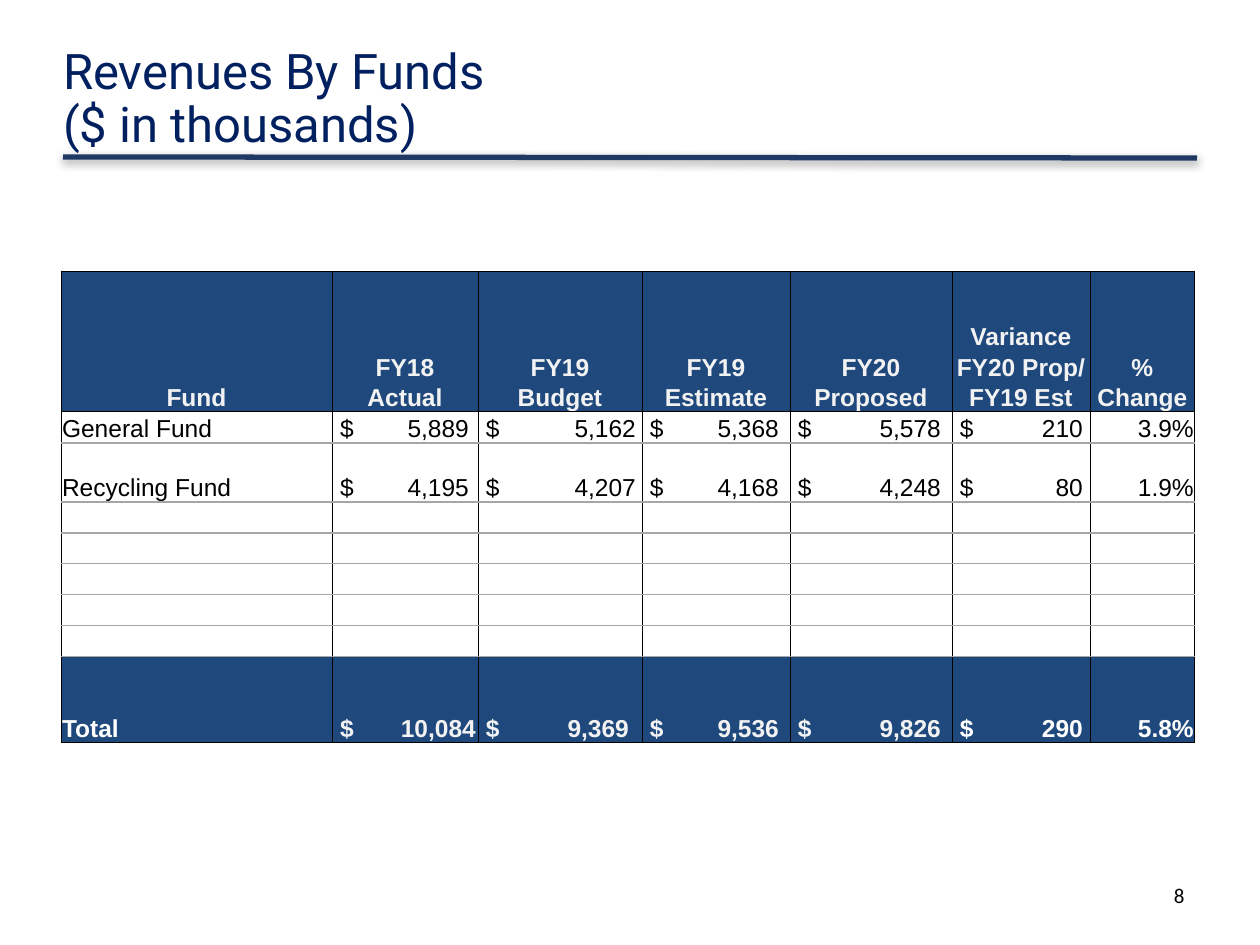
from lxml import etree
from pptx import Presentation
from pptx.dml.color import RGBColor
from pptx.enum.shapes import MSO_CONNECTOR
from pptx.enum.text import MSO_ANCHOR, MSO_AUTO_SIZE, PP_ALIGN
from pptx.oxml.ns import qn
from pptx.util import Inches, Pt

TITLE = ["Revenues By Funds", "($ in thousands)"]
PAGE = "8"
HEADER = [
    ["", "", "", "", "", "Variance", ""],
    ["Fund", "FY18", "FY19", "FY19", "FY20", "FY20 Prop/", "%"],
    ["", "Actual", "Budget", "Estimate", "Proposed", "FY19 Est", "Change"],
]
FUNDS = [
    ["General Fund", "5,889", "5,162", "5,368", "5,578", "210", "3.9%"],
    ["Recycling Fund", "4,195", "4,207", "4,168", "4,248", "80", "1.9%"],
]
BLANK_ROWS = 5
TOTAL = ["Total", "10,084", "9,369", "9,536", "9,826", "290", "5.8%"]
ROWS = HEADER + FUNDS + [[""] * 7] * BLANK_ROWS + [TOTAL]
LAST = len(ROWS) - 1
LAST_COL = len(TOTAL) - 1

# All lengths are px, 126 to the inch
COL_WIDTHS = [271, 146, 164, 148, 162, 138, 105]
ROW_HEIGHTS = [80, 30, 30, 31, 59] + [31] * BLANK_ROWS + [86]
MONEY_INSET = 8
AMOUNT_ENDS = {1: 129, 2: 150, 3: 129, 4: 143, 5: 123}
TOTAL_ENDS = {**AMOUNT_ENDS, 1: 136, 2: 143}

NAVY = RGBColor(0x00, 0x20, 0x60)
RULE = RGBColor(0x20, 0x38, 0x64)
BAND = RGBColor(0x1F, 0x49, 0x7D)
PALE = RGBColor(0xF2, 0xF2, 0xF2)
WHITE = RGBColor(0xFF, 0xFF, 0xFF)
BLACK = RGBColor(0x00, 0x00, 0x00)
GREY = RGBColor(0xA6, 0xA6, 0xA6)
THIN = (BLACK, 0.5)
SOFT = (GREY, 1)


def px(n):
    return round(n * Inches(1) / 126)


def add_run(p, text, font, size, color, bold=False):
    r = p.add_run()
    r.text = text
    r.font.name, r.font.size, r.font.bold = font, Pt(size), bold
    r.font.color.rgb = color


def sub(parent, tag, **attrs):
    return etree.SubElement(parent, qn(tag), {k: str(v) for k, v in attrs.items()})


def set_borders(cell, **edges):
    """Draw the edges L, R, T and B, each (colour, points) or None."""
    tcPr = cell._tc.get_or_add_tcPr()
    for side in "LRTB":
        edge = edges[side]
        ln = sub(tcPr, f"a:ln{side}", w=Pt(edge[1] if edge else 0))
        if edge:
            sub(sub(ln, "a:solidFill"), "a:srgbClr", val=edge[0])
        else:
            sub(ln, "a:noFill")


def row_edges(row):
    """Return the top and bottom edges of a table row."""
    if row < len(HEADER):
        return (None if row else THIN), (THIN if row == len(HEADER) - 1 else None)
    return (THIN if row == len(HEADER) else SOFT), (THIN if row == LAST else SOFT)


def text_color(row, col):
    if row < len(HEADER):
        return PALE
    if row < LAST:
        return BLACK
    return PALE if 1 <= col <= 4 else WHITE


def fill_cell(cell, row, col, text):
    is_header = row < len(HEADER)
    banded = is_header or row == LAST
    is_money = bool(text) and not is_header and col in AMOUNT_ENDS
    top, bottom = row_edges(row)
    if is_header and col == 0 and row == 1:
        bottom = THIN  # the merged cell ends at the foot of the header
    set_borders(cell, L=THIN, R=THIN, T=top, B=bottom)
    if banded:
        cell.fill.solid()
        cell.fill.fore_color.rgb = BAND
    else:
        cell.fill.background()
    cell.vertical_anchor = MSO_ANCHOR.BOTTOM
    cell.margin_left = px(MONEY_INSET if is_money else 1)
    cell.margin_top = cell.margin_right = px(1)
    cell.margin_bottom = 0

    p = cell.text_frame.paragraphs[0]
    if not text:
        p._p.get_or_add_endParaRPr().set("sz", "1400")
        return
    if is_header:
        p.alignment = PP_ALIGN.CENTER
    elif col == LAST_COL:
        p.alignment = PP_ALIGN.RIGHT
    else:
        p.alignment = PP_ALIGN.LEFT
    if is_money:
        ends = TOTAL_ENDS if row == LAST else AMOUNT_ENDS
        tabs = sub(p._p.get_or_add_pPr(), "a:tabLst")
        sub(tabs, "a:tab", pos=px(ends[col]), algn="r")
        text = f"$\t{text}"
    add_run(p, text, "Arial", 14, text_color(row, col), banded)


def add_title(slide):
    s = slide.shapes.title
    s.left, s.top, s.width, s.height = px(63), px(42), px(864), px(116)
    tf = s.text_frame
    tf.word_wrap, tf.auto_size = True, MSO_AUTO_SIZE.NONE
    tf.vertical_anchor = MSO_ANCHOR.MIDDLE
    tf.margin_left = tf.margin_top = tf.margin_right = tf.margin_bottom = 0
    p = tf.paragraphs[0]
    p.alignment, p.line_spacing = PP_ALIGN.LEFT, 0.9
    for i, line in enumerate(TITLE):
        if i:
            p.add_line_break()
        add_run(p, line, "Roboto", 28, NAVY)


def add_title_rule(slide):
    s = slide.shapes.add_connector(
        MSO_CONNECTOR.STRAIGHT, px(63), px(157), px(1197), px(158))
    s.line.color.rgb, s.line.width = RULE, Pt(3)
    shadow = sub(sub(s._element.spPr, "a:effectLst"), "a:outerShdw",
                 blurRad=Pt(5), dist=Pt(1.6), dir=90 * 60000, rotWithShape=0)
    sub(sub(shadow, "a:srgbClr", val=BLACK), "a:alpha", val=38000)


def add_page_number(slide):
    tf = slide.shapes.add_textbox(px(903), px(876), px(294), px(50)).text_frame
    tf.word_wrap = True
    p = tf.paragraphs[0]
    p.alignment = PP_ALIGN.RIGHT
    add_run(p, PAGE, "Calibri", 12, BLACK)


def add_fund_table(slide):
    table = slide.shapes.add_table(
        len(ROWS), len(COL_WIDTHS), px(61), px(271),
        px(sum(COL_WIDTHS)), px(sum(ROW_HEIGHTS))).table
    table.first_row = table.horz_banding = False
    for column, width in zip(table.columns, COL_WIDTHS):
        column.width = px(width)
    for row, height in zip(table.rows, ROW_HEIGHTS):
        row.height = px(height)
    for i, values in enumerate(ROWS):
        for j, text in enumerate(values):
            fill_cell(table.cell(i, j), i, j, text)
    table.cell(1, 0).merge(table.cell(2, 0))


def main():
    prs = Presentation()
    prs.slide_width, prs.slide_height = Inches(10), Inches(7.5)
    slide = prs.slides.add_slide(prs.slide_layouts[5])
    add_title_rule(slide)
    add_title(slide)
    add_page_number(slide)
    add_fund_table(slide)
    prs.save("out.pptx")


if __name__ == "__main__":
    main()
